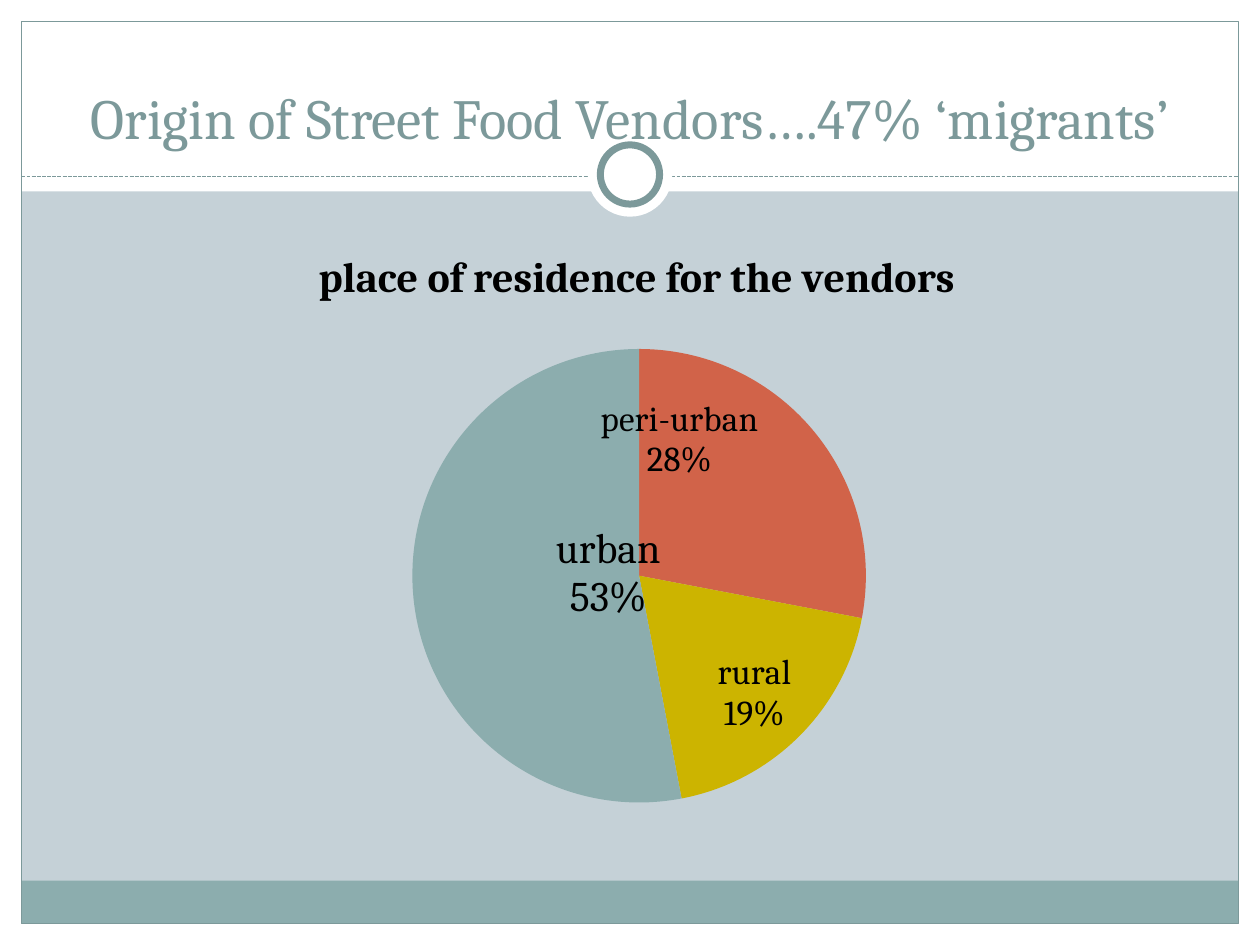
from lxml.etree import SubElement
from pptx import Presentation
from pptx.chart.data import CategoryChartData
from pptx.dml.color import RGBColor
from pptx.enum.chart import XL_CHART_TYPE as ChartType, XL_LABEL_POSITION as LabelPosition
from pptx.enum.dml import MSO_LINE as Dash
from pptx.enum.shapes import MSO_CONNECTOR as Connector, MSO_SHAPE as Shape
from pptx.enum.text import MSO_ANCHOR as Anchor, PP_ALIGN as Align
from pptx.oxml import parse_xml
from pptx.oxml.ns import nsdecls, qn
from pptx.util import Inches, Pt

WIDTH, HEIGHT = Inches(10), Inches(7.5)
FONT = "Cambria"
COLORS = {
    "page": "C5D1D7", "white": "FFFFFF", "teal": "8CADAE", "edge": "7C999A",
    "red": "D16349", "yellow": "CCB400", "black": "000000",
}
RESIDENCES = [
    ("peri-urban", 28, "red", 20, (-0.04, -0.1)),
    ("rural", 19, "yellow", 20, (0.03, 0.06)),
    ("urban", 53, "teal", 24, (0.07, -0.02)),
]


def color(name):
    """Return the named palette colour."""
    return RGBColor.from_string(COLORS[name])


def inches(*lengths):
    """Turn a box in inches into slide lengths."""
    return [Inches(length) for length in lengths]


def style_font(font, size, name, bold=False):
    """Set face, size, colour and weight of a font."""
    font.name, font.size, font.bold = FONT, Pt(size), bold
    font.color.rgb = color(name)


def add_panel(page, box, fill=None, line_width=0, kind=Shape.RECTANGLE):
    """Draw a flat shape with an optional fill and edge."""
    panel = page.shapes.add_shape(kind, *box)
    panel.shadow.inherit = False
    if fill:
        panel.fill.solid()
        panel.fill.fore_color.rgb = color(fill)
    else:
        panel.fill.background()
    if line_width:
        panel.line.color.rgb = color("edge")
        panel.line.width = Pt(line_width)
    else:
        panel.line.fill.background()


def add_frame(page, box, margin, header, footer):
    """Draw the white margins, footer band and border around the page."""
    left, top, width, height = box
    right, bottom = left + width - margin, top + height - margin
    inner = width - 2 * margin
    for edge in [
        (left, bottom, width, margin), (left, top, width, header),
        (left, top, margin, height), (right, top, margin, height),
    ]:
        add_panel(page, edge, "white")
    add_panel(page, (left + margin, bottom - footer, inner, footer), "teal")
    add_panel(page, (left + margin, top + margin, inner, height - 2 * margin), line_width=0.75)


def add_divider(page, box):
    """Draw the dashed rule with the ring centred on its box."""
    left, top, width, height = box
    rule_y = top + Inches(0.35)
    rule = page.shapes.add_connector(Connector.STRAIGHT, left, rule_y, left + width, rule_y)
    rule.line.color.rgb = color("edge")
    rule.line.width = Pt(0.75)
    rule.line.dash_style = Dash.SQUARE_DOT
    rule.line._ln.find(qn("a:prstDash")).set("val", "sysDash")
    SubElement(rule._element.spPr, qn("a:effectLst"))
    for inset, line_width in [(0, 0), (Inches(0.1), 4)]:
        size = height - 2 * inset
        ring = (left + (width - size) // 2, top + inset, size, size)
        add_panel(page, ring, "white", line_width, Shape.OVAL)


def add_title(page, box, text):
    """Write the slide title at the bottom of its box."""
    frame = page.shapes.add_textbox(*box).text_frame
    frame.word_wrap = True
    frame.vertical_anchor = Anchor.BOTTOM
    para = frame.paragraphs[0]
    para.text = text
    para.alignment = Align.CENTER
    style_font(para.font, 32.4, "edge")


def set_layout(element, index, **values):
    """Give a chart part a manual layout, as shares of the chart."""
    for old in element.findall(qn("c:layout")):
        element.remove(old)
    layout = parse_xml(f"<c:layout {nsdecls('c')}><c:manualLayout/></c:layout>")
    for name, value in values.items():
        SubElement(layout[0], qn(f"c:{name}")).set("val", str(value))
    element.insert(index, layout)


def style_slice(point, fill, size, offset):
    """Colour a slice and place its category and percent label."""
    point.format.fill.solid()
    point.format.fill.fore_color.rgb = color(fill)
    point.format.line.fill.background()
    label = point.data_label
    style_font(label.font, size, "black")
    label.position = LabelPosition.CENTER
    element = label.font._element.getparent().getparent().getparent().getparent()
    for name, shown in [("showVal", "0"), ("showCatName", "1"), ("showPercent", "1")]:
        element.find(qn(f"c:{name}")).set("val", shown)
    SubElement(element, qn("c:separator")).text = "\n"
    set_layout(element, 1, x=offset[0], y=offset[1])


def add_residence_chart(page, box, title):
    """Draw the pie of where the vendors live."""
    data = CategoryChartData()
    data.categories = [row[0] for row in RESIDENCES]
    data.add_series("Series 1", [row[1] for row in RESIDENCES])
    chart = page.shapes.add_chart(ChartType.PIE, *box, data).chart
    style_font(chart.font, 10, "black")
    chart.has_legend = False
    chart.has_title = True
    para = chart.chart_title.text_frame.paragraphs[0]
    para.text = title
    style_font(para.font, 24, "black", bold=True)
    set_layout(chart.chart_title._element, 1, xMode="edge", yMode="edge", x=0.23, y=0.05)
    plot = chart.plots[0]
    plot.vary_by_categories = True
    set_layout(
        plot._element.getparent(), 0, layoutTarget="inner", xMode="edge", yMode="edge",
        x=0.09, y=0.22, w=0.84, h=0.72,
    )
    for index, (_, _, fill, size, offset) in enumerate(RESIDENCES):
        style_slice(plot.series[0].points[index], fill, size, offset)


def main():
    """Build and save the slide."""
    deck = Presentation()
    deck.slide_width, deck.slide_height = WIDTH, HEIGHT
    page = deck.slides.add_slide(deck.slide_layouts[6])
    page.background.fill.solid()
    page.background.fill.fore_color.rgb = color("page")
    add_frame(page, (0, 0, WIDTH, HEIGHT), *inches(0.17, 1.52, 0.34))
    add_divider(page, inches(0.17, 1.05, 9.66, 0.67))
    add_title(page, inches(0, 0, 10, 1.25), "Origin of Street Food Vendors….47% ‘migrants’")
    add_residence_chart(page, inches(0.33, 1.67, 9.3, 5), "place of residence for the vendors")
    deck.save("out.pptx")


if __name__ == "__main__":
    main()
